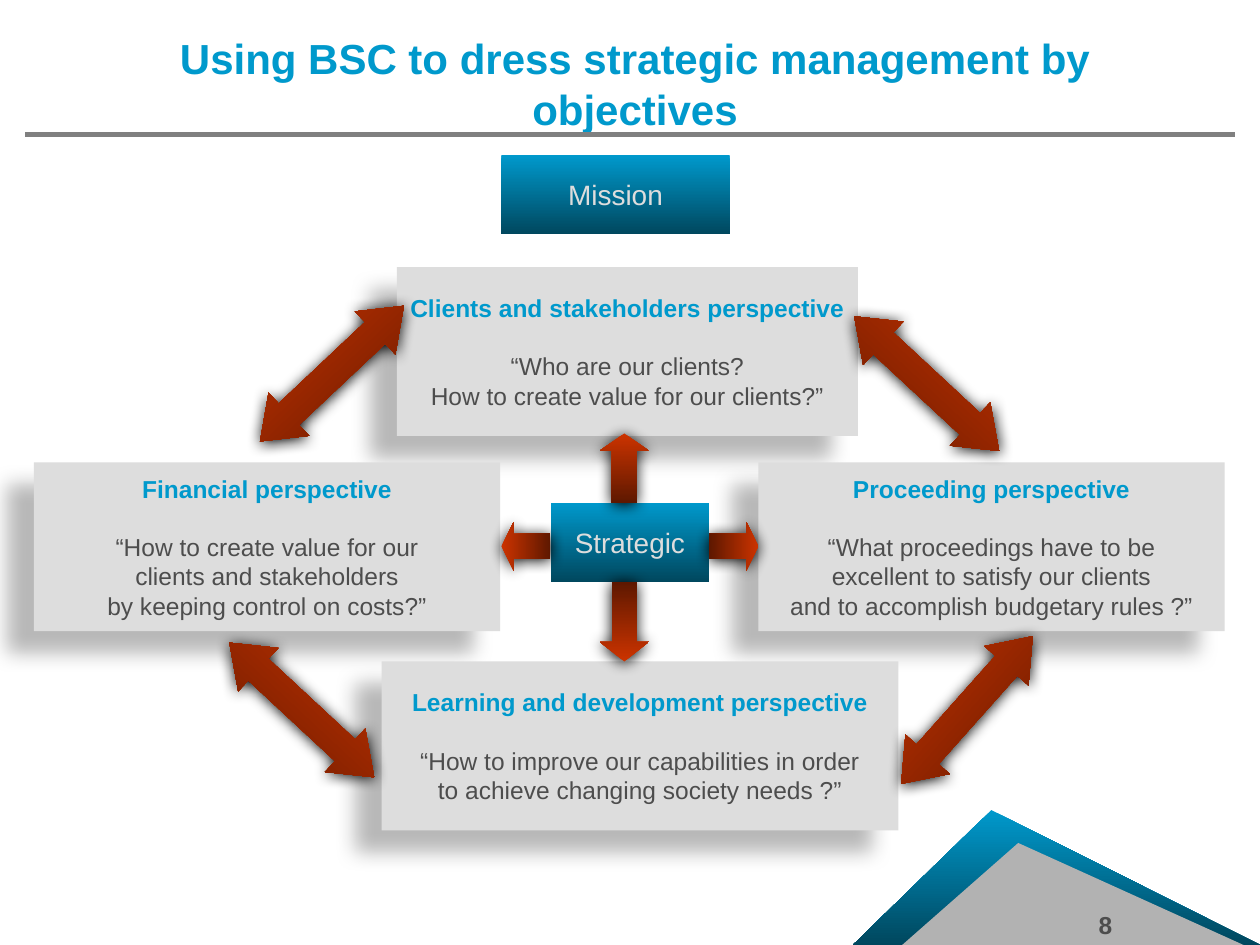
from dataclasses import dataclass

from lxml.etree import SubElement
from pptx import Presentation
from pptx.dml.color import RGBColor
from pptx.enum.shapes import MSO_CONNECTOR, MSO_SHAPE as Preset
from pptx.enum.text import MSO_ANCHOR as Anchor, PP_ALIGN as Align
from pptx.oxml.ns import qn
from pptx.util import Inches, Pt

COLORS = {
    "blue": "0099CC", "navy": "00475E", "red": "CC3300", "brown": "5E1800",
    "panel": "DDDDDD", "text": "4D4D4D", "hill": "B2B2B2", "rule": "808080",
    "shadow": "000000",
}
FONT = "Arial"
PANEL_HEIGHT = 1.34


@dataclass
class Shadow:
    opacity: int
    blur: float
    distance: float
    direction: int


@dataclass
class Perspective:
    left: float
    top: float
    width: float
    heading: str
    lines: list[str]


@dataclass
class Arrow:
    left: float
    top: float
    width: float
    height: float
    rotation: float
    head: float
    preset: Preset = Preset.UP_ARROW


PANEL_SHADOW = Shadow(28, 11.8, 19.7, 141)
ARROW_SHADOW = Shadow(100, 8.5, 1, 90)

PERSPECTIVES = [
    Perspective(3.15, 2.12, 3.66, "Clients and stakeholders perspective",
                ["“Who are our clients?", "How to create value for our clients?”"]),
    Perspective(0.27, 3.67, 3.7, "Financial perspective",
                ["“How to create value for our", "clients and stakeholders",
                 "by keeping control on costs?”"]),
    Perspective(6.02, 3.67, 3.7, "Proceeding perspective",
                ["“What proceedings have to be", "excellent to satisfy our clients",
                 "and to accomplish budgetary rules ?”"]),
    Perspective(3.03, 5.25, 4.1, "Learning and development perspective",
                ["“How to improve our capabilities in order",
                 "to achieve changing society needs ?”"]),
]

CENTER_ARROWS = [
    Arrow(4.76, 3.44, 0.39, 0.55, 0, 0.35),
    Arrow(5.63, 4.14, 0.39, 0.39, 90, 0.25),
    Arrow(3.98, 4.14, 0.39, 0.39, 270, 0.25),
    Arrow(4.76, 4.62, 0.39, 0.63, 180, 0.4),
]
CYCLE_ARROWS = [
    Arrow(left, top, 1.57, 0.47, rotation, 0.67, Preset.LEFT_RIGHT_ARROW)
    for left, top, rotation in [(1.85, 2.73, 316.7), (6.89, 5.4, 311.7),
                                (1.61, 5.4, 42.9), (6.57, 2.81, 42.9)]
]


def rgb(name: str) -> RGBColor:
    return RGBColor.from_string(COLORS[name])


def write(paragraph, text: str, *, size: float, color: str, bold: bool = False,
          align=Align.CENTER, before: float = 0) -> None:
    paragraph.alignment = align
    paragraph.space_before = Pt(before)
    run = paragraph.add_run()
    run.text = text
    run.font.name = FONT
    run.font.size = Pt(size)
    run.font.bold = bold
    run.font.color.rgb = rgb(color)


def add_shadow(shape, shadow: Shadow) -> None:
    effects = shape._element.spPr.find(qn("a:effectLst"))
    outer = SubElement(effects, qn("a:outerShdw"), {
        "blurRad": str(Pt(shadow.blur)), "dist": str(Pt(shadow.distance)),
        "dir": str(shadow.direction * 60000), "algn": "ctr", "rotWithShape": "0"})
    color = SubElement(outer, qn("a:srgbClr"), val=COLORS["shadow"])
    SubElement(color, qn("a:alpha"), val=str(shadow.opacity * 1000))


def add_block(slide, preset, left: float, top: float, width: float, height: float,
              *colors: str, shadow: Shadow | None = None):
    """Add a shape without outline; two colours make a downward gradient."""
    shape = slide.shapes.add_shape(
        preset, Inches(left), Inches(top), Inches(width), Inches(height))
    if len(colors) == 1:
        shape.fill.solid()
        shape.fill.fore_color.rgb = rgb(colors[0])
    else:
        shape.fill.gradient()
        shape.fill.gradient_angle = 270
        for stop, color in zip(shape.fill.gradient_stops, colors):
            stop.color.rgb = rgb(color)
    shape.line.fill.background()
    shape.shadow.inherit = False
    if shadow:
        add_shadow(shape, shadow)
    shape.text_frame.word_wrap = False
    shape.text_frame.vertical_anchor = Anchor.MIDDLE
    return shape


def add_label(slide, text: str, left: float, top: float, width: float) -> None:
    shape = add_block(slide, Preset.FLOWCHART_PROCESS, left, top, width, 0.63,
                      "blue", "navy")
    write(shape.text_frame.paragraphs[0], text, size=16, color="panel")


def add_perspective(slide, item: Perspective) -> None:
    shape = add_block(slide, Preset.RECTANGLE, item.left, item.top, item.width,
                      PANEL_HEIGHT, "panel", shadow=PANEL_SHADOW)
    frame = shape.text_frame
    write(frame.paragraphs[0], item.heading, size=14, color="blue", bold=True)
    for index, line in enumerate(item.lines):
        write(frame.add_paragraph(), line, size=14, color="text",
              before=16.5 if index == 0 else 0)


def add_arrow(slide, arrow: Arrow) -> None:
    shape = add_block(slide, arrow.preset, arrow.left, arrow.top, arrow.width,
                      arrow.height, "red", "brown", shadow=ARROW_SHADOW)
    shape.adjustments[0] = 0.5
    shape.adjustments[1] = arrow.head
    shape.rotation = arrow.rotation


def main() -> None:
    presentation = Presentation()
    presentation.slide_width, presentation.slide_height = Inches(10), Inches(7.5)
    slide = presentation.slides.add_slide(presentation.slide_layouts[5])

    # Corner hills
    for left, top, width, colors in [(6.77, 6.43, 3.23, ["blue", "navy"]),
                                     (7.16, 6.69, 2.71, ["hill"])]:
        hill = add_block(slide, Preset.ISOSCELES_TRIANGLE, left, top, width,
                         7.5 - top, *colors)
        hill.adjustments[0] = 0.34

    # Rule under the title
    rule = slide.shapes.add_connector(
        MSO_CONNECTOR.STRAIGHT, Inches(0.2), Inches(1.07), Inches(9.8), Inches(1.07))
    rule.line.color.rgb = rgb("rule")
    rule.line.width = Pt(3)
    SubElement(rule._element.spPr, qn("a:effectLst"))

    # Page number
    number = slide.shapes.add_textbox(
        Inches(8.62), Inches(7.17), Inches(0.55), Inches(0.33))
    number.text_frame.word_wrap = True
    write(number.text_frame.paragraphs[0], "8", size=14, color="text", bold=True,
          align=Align.LEFT)

    # Title
    title = slide.shapes.title
    title.left, title.top = Inches(0.75), Inches(0.21)
    title.width, title.height = Inches(8.58), Inches(0.9)
    title.text_frame.word_wrap = True
    title.text_frame.vertical_anchor = Anchor.MIDDLE
    write(title.text_frame.paragraphs[0],
          "Using BSC to dress strategic management by objectives",
          size=24, color="blue", bold=True)

    # Diagram
    add_label(slide, "Mission", 3.98, 1.23, 1.81)
    for item in PERSPECTIVES:
        add_perspective(slide, item)
    add_label(slide, "Strategic", 4.37, 3.99, 1.26)
    for arrow in CENTER_ARROWS + CYCLE_ARROWS:
        add_arrow(slide, arrow)

    presentation.save("out.pptx")


if __name__ == "__main__":
    main()
